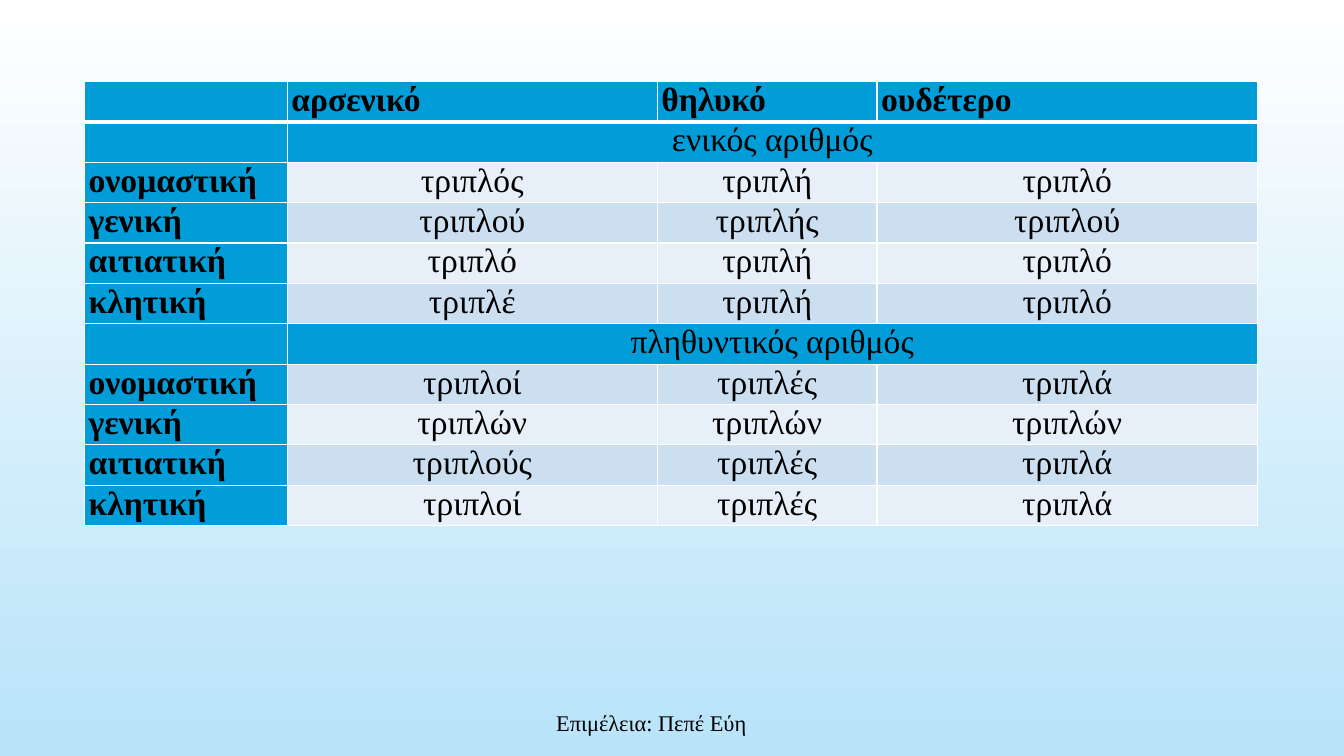
from lxml import etree
from pptx import Presentation
from pptx import util as u
from pptx.dml import color
from pptx.enum import text as t
from pptx.oxml import ns

ROWS = [
    ["", "αρσενικό", "θηλυκό", "ουδέτερο"],
    ["", "ενικός αριθμός"],
    ["ονομαστική", "τριπλός", "τριπλή", "τριπλό"],
    ["γενική", "τριπλού", "τριπλής", "τριπλού"],
    ["αιτιατική", "τριπλό", "τριπλή", "τριπλό"],
    ["κλητική", "τριπλέ", "τριπλή", "τριπλό"],
    ["", "πληθυντικός αριθμός"],
    ["ονομαστική", "τριπλοί", "τριπλές", "τριπλά"],
    ["γενική", "τριπλών", "τριπλών", "τριπλών"],
    ["αιτιατική", "τριπλούς", "τριπλές", "τριπλά"],
    ["κλητική", "τριπλοί", "τριπλές", "τριπλά"],
]
WIDTHS = [15.08, 27.53, 16.35, 28.3]


def rgb(code):
    return color.RGBColor.from_string(code)


def put(frame, words, size=24, bold=False, mid=True, ink="000000", face="Times New Roman"):
    para = frame.paragraphs[0]
    para.alignment = t.PP_ALIGN.CENTER if mid else t.PP_ALIGN.LEFT
    if words:
        run = para.add_run()
        run.text = words
        font = run.font
        font.size, font.bold, font.name = u.Pt(size), bold, face
        font.color.rgb = rgb(ink)


class Deck:
    """Holds the style and the current slide; lengths are percent of the slide."""

    head, bands, rule = "009DD9", ["E7EFF8", "CCDFF1"], "FFFFFF"

    def __init__(self):
        self.show = Presentation()
        self.show.slide_width, self.show.slide_height = u.Inches(13.33), u.Inches(7.5)
        self.slide = self.show.slides.add_slide(self.show.slide_layouts[6])

    def wide(self, share):
        return int(self.show.slide_width * share / 100)

    def high(self, share):
        return int(self.show.slide_height * share / 100)

    def back(self, top, base):
        fill = self.slide.background.fill
        fill.gradient()
        fill.gradient_angle = 270
        for stop, code, spot in zip(fill.gradient_stops, [top, base], [0, 1]):
            stop.color.rgb, stop.position = rgb(code), spot

    def note(self, words, x, y, w, h, **style):
        box = self.slide.shapes.add_textbox(self.wide(x), self.high(y), self.wide(w), self.high(h))
        frame = box.text_frame
        frame.word_wrap = True
        frame.vertical_anchor = t.MSO_ANCHOR.MIDDLE
        put(frame, words, **style)

    def edge(self, cell, **sides):
        props = cell._tc.get_or_add_tcPr()
        for side in "LRTB":
            line = etree.SubElement(props, ns.qn("a:ln" + side), w=str(u.Pt(sides.get(side, 1))))
            solid = etree.SubElement(line, ns.qn("a:solidFill"))
            etree.SubElement(solid, ns.qn("a:srgbClr"), val=self.rule)

    def cell(self, cell, words, fill, sides, **style):
        cell.margin_left = cell.margin_right = u.Inches(0.04)
        cell.margin_top = cell.margin_bottom = 0
        self.edge(cell, **sides)
        cell.fill.solid()
        cell.fill.fore_color.rgb = rgb(fill)
        put(cell.text_frame, words, **style)

    def table(self, rows, widths, x, y, h):
        """Draws rows that grow to fit their text."""
        shape = self.slide.shapes.add_table(
            len(rows), len(widths), self.wide(x), self.high(y),
            self.wide(sum(widths)), self.high(h))
        grid = shape.table
        for col, share in zip(grid.columns, widths):
            col.width = self.wide(share)
        last = len(widths) - 1
        for r, row in enumerate(rows):
            span = len(row) < len(widths)
            grid.rows[r].height = self.high(1.87 if span else 0.01 if r else 1.33)
            sides = {0: {"B": 3}, 1: {"T": 3}}.get(r, {})
            for c in range(len(widths)):
                words = row[c] if c < len(row) else ""
                label = r == 0 or c == 0
                fill = self.head if label or span else self.bands[r % 2]
                self.cell(grid.cell(r, c), words, fill, sides, bold=label, mid=not label)
            if span:
                grid.cell(r, 1).merge(grid.cell(r, last))
        shape.height = self.high(h)


def main():
    deck = Deck()
    deck.back("FFFFFF", "B8E3F9")
    deck.note("Επιμέλεια: Πεπέ Εύη", 21.08, 92.93, 54.76, 5.33, size=16)
    deck.table(ROWS, WIDTHS, 6.3, 10.8, 58.67)
    deck.show.save("out.pptx")


if __name__ == "__main__":
    main()
